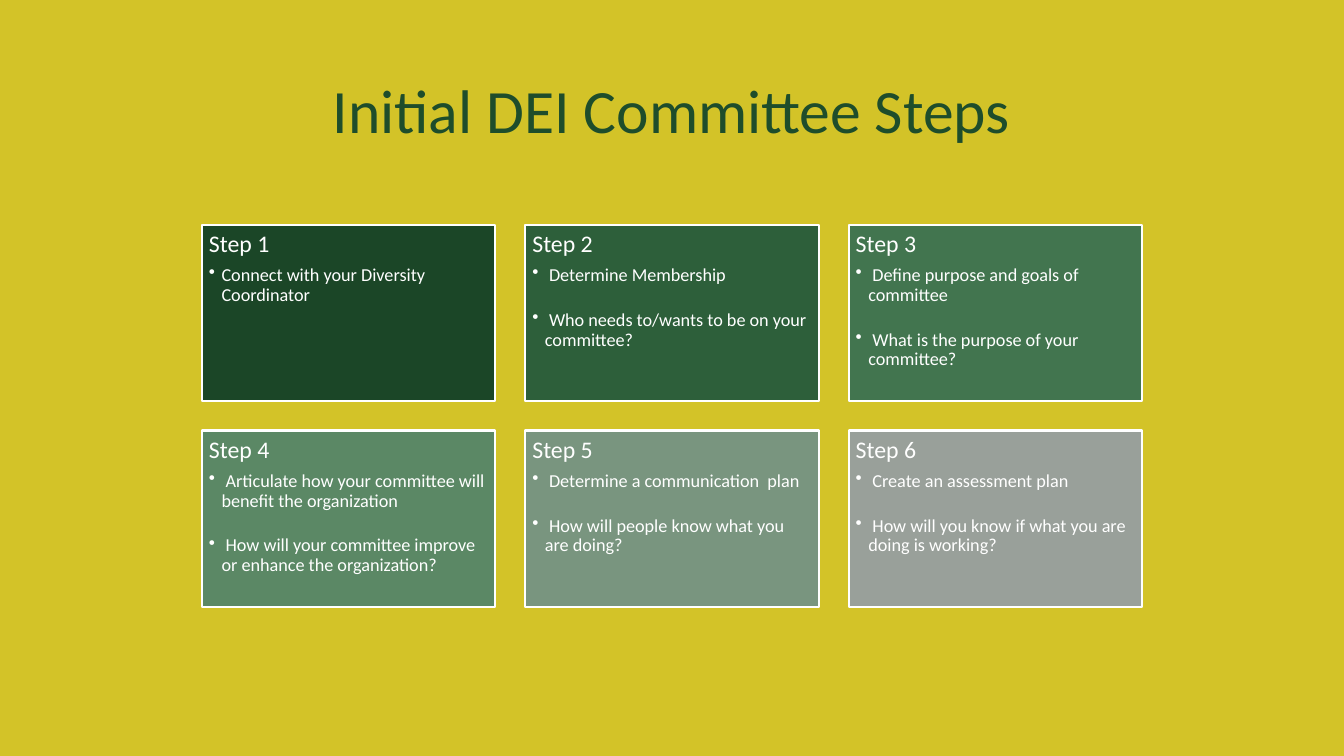
from dataclasses import dataclass

import pptx
import pptx.dml.color
import pptx.enum.shapes
import pptx.enum.text
import pptx.util
from pptx.oxml.ns import qn

Pt = pptx.util.Pt
WIDE, HIGH = 960, 540
COLS = 3
CARD_W, CARD_H = 209.5, 126
GAP_X, GAP_Y = 21.5, 21
LEFT = (WIDE - COLS * CARD_W - (COLS - 1) * GAP_X) / 2
TOP = 160.5
INSET = 5
INDENT = 9
FONT = "Calibri"
WHITE = "FFFFFF"


@dataclass
class Step:
    fill: str
    points: list[str]


STEPS = [
    Step("1B4627", ["Connect with your Diversity Coordinator"]),
    Step("2D5F3A", [" Determine Membership",
                    " Who needs to/wants to be on your committee?"]),
    Step("42754F", [" Define purpose and goals of committee",
                    " What is the purpose of your committee?"]),
    Step("5B8865", [" Articulate how your committee will benefit the organization",
                    " How will your committee improve or enhance the organization?"]),
    Step("79957F", [" Determine a communication  plan",
                    " How will people know what you are doing?"]),
    Step("99A09A", [" Create an assessment plan",
                    " How will you know if what you are doing is working?"]),
]


def paint(target, color: str) -> None:
    """Give a fill a solid colour."""
    target.solid()
    target.fore_color.rgb = pptx.dml.color.RGBColor.from_string(color)


def style(para, size: float, color: str, align) -> None:
    para.alignment = align
    para.line_spacing = 0.9
    for run in para.runs:
        run.font.name = FONT
        run.font.size = Pt(size)
        paint(run.font.fill, color)


def bullet(para) -> None:
    """Add a hanging bullet to a paragraph."""
    props = para._p.get_or_add_pPr()
    props.set("marL", str(Pt(INDENT)))
    props.set("indent", str(-Pt(INDENT)))
    mark = props.makeelement(qn("a:buChar"), {"char": "•"})
    props.append(mark)


def title(slide, text: str) -> None:
    box = slide.shapes.add_textbox(Pt(66), Pt(28.8), Pt(828), Pt(104.4))
    frame = box.text_frame
    frame.word_wrap = True
    frame.vertical_anchor = pptx.enum.text.MSO_ANCHOR.MIDDLE
    frame.text = text
    style(frame.paragraphs[0], 44, "1E4D2B", pptx.enum.text.PP_ALIGN.CENTER)


def card(slide, index: int, step: Step) -> None:
    row, col = divmod(index, COLS)
    box = slide.shapes.add_shape(
        pptx.enum.shapes.MSO_SHAPE.RECTANGLE,
        Pt(LEFT + col * (CARD_W + GAP_X)), Pt(TOP + row * (CARD_H + GAP_Y)),
        Pt(CARD_W), Pt(CARD_H))
    box.shadow.inherit = False
    paint(box.fill, step.fill)
    paint(box.line.fill, WHITE)
    box.line.width = Pt(1.5)

    frame = box.text_frame
    frame.word_wrap = True
    frame.vertical_anchor = pptx.enum.text.MSO_ANCHOR.TOP
    frame.margin_left = frame.margin_right = Pt(INSET)
    frame.margin_top = frame.margin_bottom = Pt(INSET)
    frame.text = f"Step {index + 1}"
    align = pptx.enum.text.PP_ALIGN.LEFT
    style(frame.paragraphs[0], 17, WHITE, align)
    for order, text in enumerate(step.points):
        para = frame.add_paragraph()
        para.text = text
        para.level = 1
        bullet(para)
        para.space_before = Pt(18 if order else 6)
        style(para, 13, WHITE, align)


def main() -> None:
    deck = pptx.Presentation()
    deck.slide_width, deck.slide_height = Pt(WIDE), Pt(HIGH)
    slide = deck.slides.add_slide(deck.slide_layouts[6])
    paint(slide.background.fill, "D3C328")
    title(slide, "Initial DEI Committee Steps")
    for index, step in enumerate(STEPS):
        card(slide, index, step)
    deck.save("out.pptx")


if __name__ == "__main__":
    main()
